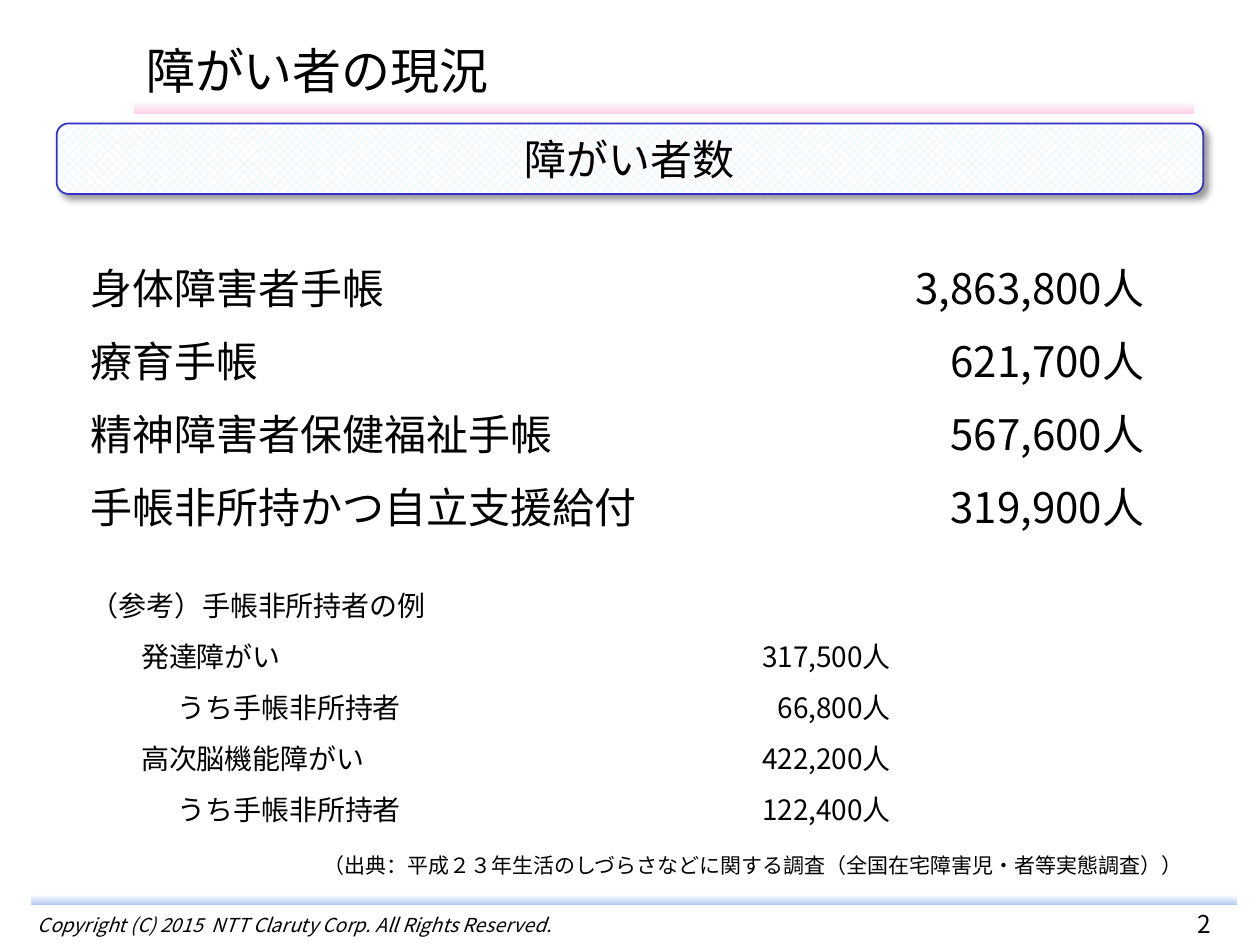
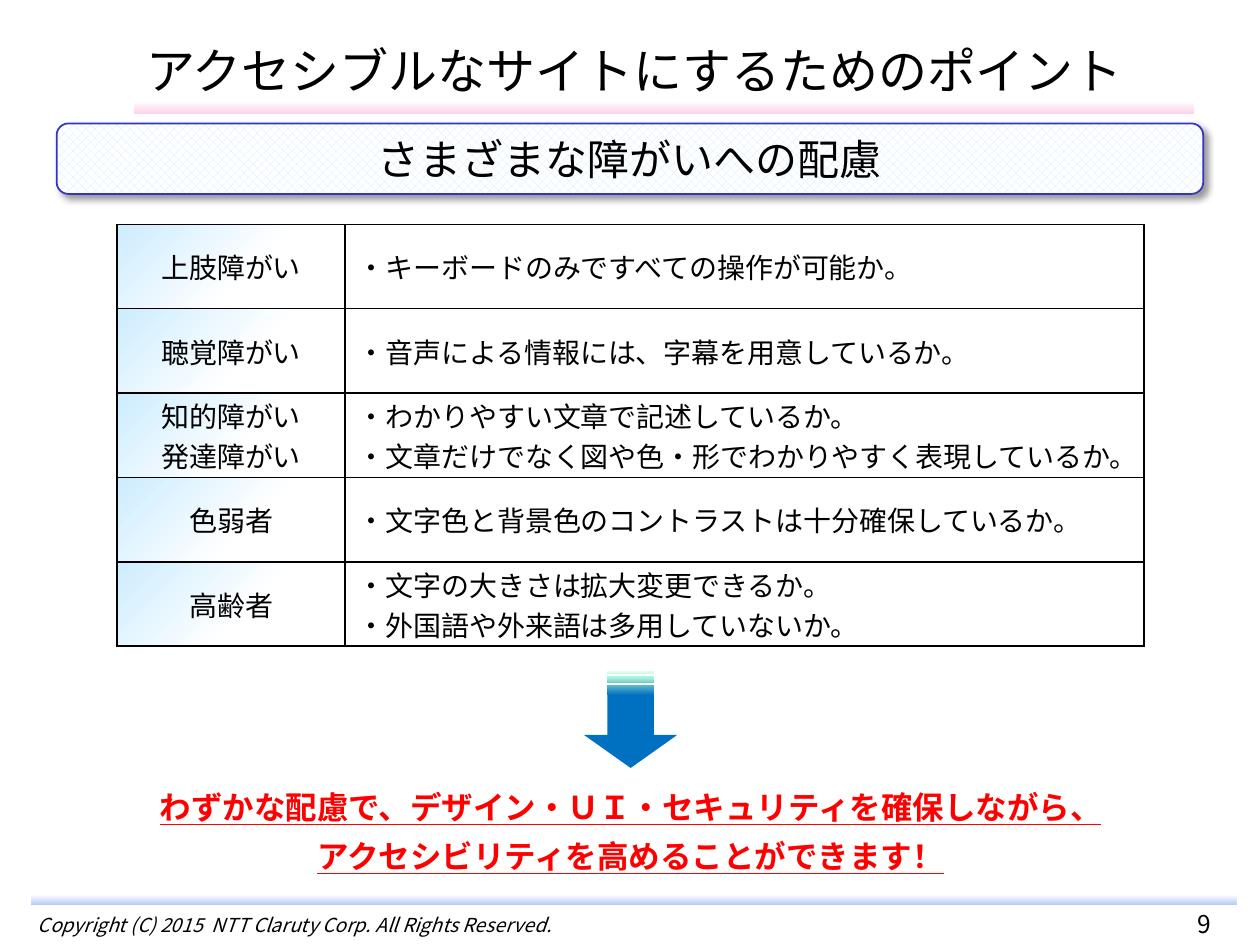
import pptx
import pptx.dml.color
import pptx.enum.dml
import pptx.enum.shapes
import pptx.enum.text
import pptx.oxml
import pptx.oxml.ns
import pptx.util
from pptx.util import Inches

SHAPE = pptx.enum.shapes.MSO_SHAPE
ALIGN = pptx.enum.text.PP_ALIGN
ANCHOR = pptx.enum.text.MSO_ANCHOR
qn = pptx.oxml.ns.qn

SANS = "Noto Sans CJK JP"
SERIF = "Times New Roman"
BLACK, WHITE, RED = "000000", "FFFFFF", "FF0000"
PALE_BLUE, FRAME_BLUE = "CCECFF", "3333CC"
COPYRIGHT = "Copyright (C) 2015  NTT Claruty Corp. All Rights Reserved."


def rgb(hex_colour):
    return pptx.dml.color.RGBColor.from_string(hex_colour)


def xml(tag, body, attrs=""):
    ns = pptx.oxml.ns.nsdecls("a")
    return pptx.oxml.parse_xml(f"<a:{tag} {ns} {attrs}>{body}</a:{tag}>")


def solid(hex_colour, inner=""):
    return f'<a:srgbClr val="{hex_colour}">{inner}</a:srgbClr>'


def set_gradient(fill, props, stops, angle):
    """Give the owner of props a linear gradient of (percent, colour) stops."""
    fill.background()
    gs = "".join(f'<a:gs pos="{pos * 1000}">{solid(c)}</a:gs>' for pos, c in stops)
    body = f'<a:gsLst>{gs}</a:gsLst><a:lin ang="{angle * 60000}" scaled="0"/>'
    props.replace(props.find(qn("a:noFill")), xml("gradFill", body))


def set_borders(cell, colour=BLACK, width=1):
    tcPr = cell._tc.get_or_add_tcPr()
    for side in ("lnL", "lnR", "lnT", "lnB"):
        line = f"<a:solidFill>{solid(colour)}</a:solidFill>"
        tcPr.append(xml(side, line, f'w="{pptx.util.Pt(width)}"'))


def write(tf, text, size, colour=BLACK, font=SANS, bold=False, italic=False,
          underline=False, align=ALIGN.LEFT, gap=0):
    """Fill a text frame, one paragraph per line, with gap points between."""
    tf.word_wrap = True
    for i, line in enumerate(text.split("\n")):
        p = tf.add_paragraph() if i else tf.paragraphs[0]
        p.alignment = align
        p.space_before = pptx.util.Pt(gap if i else 0)
        p.space_after = pptx.util.Pt(0)
        p.line_spacing = 1.0
        r = p.add_run()
        r.text = line
        f = r.font
        f.size, f.bold, f.italic, f.underline = pptx.util.Pt(size), bold, italic, underline
        f.color.rgb = rgb(colour)
        f.name = font
        r._r.get_or_add_rPr().append(xml("ea", "", f'typeface="{SANS}"'))


class Deck:
    def __init__(self):
        self.prs = pptx.Presentation()
        self.prs.slide_width, self.prs.slide_height = Inches(10), Inches(7.5)
        self.s = None

    def new_slide(self, title, heading, number):
        self.s = self.prs.slides.add_slide(self.prs.slide_layouts[5])
        self.band(0.25, 7.1, 9.57, 0.08, "B8CDF4")
        self.band(1.06, 0.8, 8.42, 0.1, "FCD4E9")
        self.text(0.22, 7.24, 6.06, 0.2, COPYRIGHT, pad=(0.08, 0.01), size=11, italic=True)
        self.text(8.6, 7, 1.91, 0.5, str(number), anchor=ANCHOR.BOTTOM,
                  size=14, align=ALIGN.CENTER)
        self.title(title)
        self.heading(heading)

    def title(self, text):
        sp = self.s.shapes.title
        sp.left, sp.top, sp.width, sp.height = map(Inches, (1.06, 0.26, 8.42, 0.59))
        sp.text_frame.auto_size = pptx.enum.text.MSO_AUTO_SIZE.NONE
        sp.text_frame.vertical_anchor = ANCHOR.MIDDLE
        write(sp.text_frame, text, 28)

    def shape(self, kind, *box):
        """Add a preset shape without line or shadow."""
        sp = self.s.shapes.add_shape(kind, *map(Inches, box))
        sp.shadow.inherit = False
        sp.line.fill.background()
        return sp

    def band(self, x, y, w, h, colour):
        sp = self.shape(SHAPE.RECTANGLE, x, y, w, h)
        set_gradient(sp.fill, sp._element.spPr, [(0, WHITE), (100, colour)], 90)

    def heading(self, text):
        sp = self.shape(SHAPE.ROUNDED_RECTANGLE, 0.45, 0.98, 9.1, 0.56)
        sp.fill.patterned()
        sp.fill.pattern = pptx.enum.dml.MSO_PATTERN.PERCENT_50
        sp.fill.fore_color.rgb, sp.fill.back_color.rgb = rgb(PALE_BLUE), rgb(WHITE)
        sp.line.color.rgb = rgb(FRAME_BLUE)
        sp.line.width = pptx.util.Pt(1)
        shade = solid(BLACK, '<a:alpha val="40000"/>')
        sp._element.spPr.find(qn("a:effectLst")).append(
            xml("outerShdw", shade, 'blurRad="50800" dist="38100" dir="2700000"'))
        tf = sp.text_frame
        tf.margin_top = tf.margin_bottom = 0
        tf.vertical_anchor = ANCHOR.MIDDLE
        write(tf, text, 24, align=ALIGN.CENTER)

    def arrow_down(self, x, y, w, h):
        sp = self.shape(SHAPE.STRIPED_RIGHT_ARROW, x, y, w, h)
        sp.rotation = 90
        sp.adjustments[0], sp.adjustments[1] = 0.5, 0.354
        stops = [(75, "0070C0"), (95, "BAFFDE"), (100, "DDFFEE")]
        set_gradient(sp.fill, sp._element.spPr, stops, 180)

    def text(self, x, y, w, h, text, anchor=ANCHOR.MIDDLE, pad=(0.1, 0.05), **fmt):
        tf = self.s.shapes.add_textbox(*map(Inches, (x, y, w, h))).text_frame
        tf.margin_left = tf.margin_right = Inches(pad[0])
        tf.margin_top = tf.margin_bottom = Inches(pad[1])
        tf.vertical_anchor = anchor
        write(tf, text, **fmt)

    def table(self, x, y, widths, row_height, rows, size, aligns, indents=None, grid=False):
        """Add a two-column table; a grid has borders and shaded row heads."""
        frame = self.s.shapes.add_table(
            len(rows), len(widths), Inches(x), Inches(y),
            Inches(sum(widths)), Inches(row_height * len(rows)))
        tbl = frame.table
        tbl.first_row = tbl.horz_banding = False
        for col, width in zip(tbl.columns, widths):
            col.width = Inches(width)
        for i, row in enumerate(rows):
            tbl.rows[i].height = Inches(row_height)
            for j, text in enumerate(row):
                cell = tbl.cell(i, j)
                cell.vertical_anchor = ANCHOR.MIDDLE
                cell.margin_top = cell.margin_bottom = Inches(0.01)
                indent = indents[i] if indents and j == 0 else 0
                cell.margin_left = Inches(0.1 + indent)
                cell.margin_right = Inches(0 if grid and j else 0.1)
                self.fill_cell(cell, grid, is_head=j == 0)
                write(cell.text_frame, text, size, align=aligns[j])

    def fill_cell(self, cell, grid, is_head):
        if not grid:
            cell.fill.background()
            return
        set_borders(cell)
        if is_head:
            stops = [(0, PALE_BLUE), (58, WHITE), (100, WHITE)]
            set_gradient(cell.fill, cell._tc.get_or_add_tcPr(), stops, 45)
        else:
            cell.fill.solid()
            cell.fill.fore_color.rgb = rgb(WHITE)


def current_state(deck):
    deck.new_slide("障がい者の現況", "障がい者数", 2)
    holders = [
        ("身体障害者手帳", "3,863,800人"),
        ("療育手帳", "621,700人"),
        ("精神障害者保健福祉手帳", "567,600人"),
        ("手帳非所持かつ自立支援給付", "319,900人"),
    ]
    non_holders = [
        ("（参考）手帳非所持者の例", ""),
        ("発達障がい", "317,500人"),
        ("うち手帳非所持者", "66,800人"),
        ("高次脳機能障がい", "422,200人"),
        ("うち手帳非所持者", "122,400人"),
    ]
    aligns = (ALIGN.LEFT, ALIGN.RIGHT)
    deck.table(0.62, 1.98, (5.3, 3.26), 0.58, holders, 24, aligns)
    deck.table(0.62, 4.59, (3.94, 2.61), 0.405, non_holders, 16, aligns,
               indents=(0, 0.4, 0.69, 0.4, 0.69))
    deck.text(2.41, 6.7, 7.14, 0.34,
              "（出典：平成２３年生活のしづらさなどに関する調査（全国在宅障害児・者等実態調査））",
              size=12, font=SERIF, align=ALIGN.CENTER)


def accessible_points(deck):
    deck.new_slide("アクセシブルなサイトにするためのポイント", "さまざまな障がいへの配慮", 9)
    points = [
        ("上肢障がい", "・キーボードのみですべての操作が可能か。"),
        ("聴覚障がい", "・音声による情報には、字幕を用意しているか。"),
        ("知的障がい\n発達障がい",
         "・わかりやすい文章で記述しているか。\n"
         "・文章だけでなく図や色・形でわかりやすく表現しているか。"),
        ("色弱者", "・文字色と背景色のコントラストは十分確保しているか。"),
        ("高齢者", "・文字の大きさは拡大変更できるか。\n・外国語や外来語は多用していないか。"),
    ]
    deck.table(0.93, 1.78, (1.81, 6.34), 0.67, points, 16,
               (ALIGN.CENTER, ALIGN.LEFT), grid=True)
    deck.arrow_down(4.62, 5.34, 0.77, 0.74)
    deck.text(0.98, 6.16, 8.05, 0.88,
              "わずかな配慮で、デザイン・ＵＩ・セキュリティを確保しながら、\n"
              "アクセシビリティを高めることができます！",
              size=18, colour=RED, font=SERIF, bold=True, underline=True,
              align=ALIGN.CENTER, gap=6.5)


def main():
    deck = Deck()
    current_state(deck)
    accessible_points(deck)
    deck.prs.save("out.pptx")


if __name__ == "__main__":
    main()
